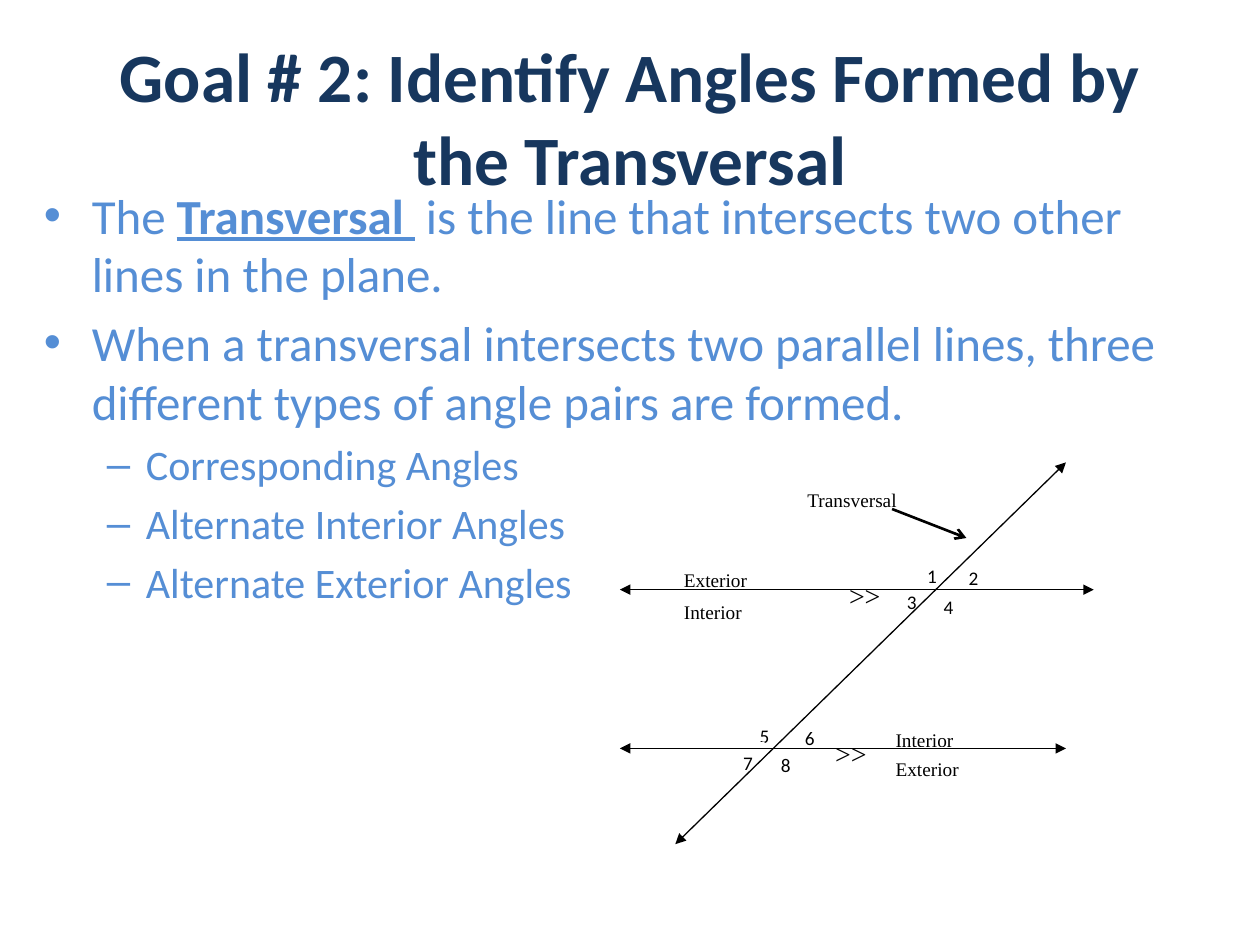
from dataclasses import dataclass
from lxml.etree import SubElement
from pptx import Presentation
from pptx.dml.color import RGBColor
from pptx.enum.shapes import MSO_CONNECTOR as Connector, MSO_SHAPE as Shape
from pptx.enum.text import MSO_ANCHOR as Anchor, PP_ALIGN as Align
from pptx.oxml.ns import qn
from pptx.util import Inches, Pt


@dataclass(frozen=True)
class Theme:
    title: RGBColor = RGBColor(0x17, 0x37, 0x5E)
    body: RGBColor = RGBColor(0x55, 0x8E, 0xD5)
    ink: RGBColor = RGBColor(0, 0, 0)
    paper: RGBColor = RGBColor(255, 255, 255)
    sans: str = "Calibri"
    serif: str = "Times New Roman"
    title_size: float = 39.6
    bullet_size: float = 28
    dash_size: float = 24
    mark_size: float = 16
    label_size: float = 11


THEME = Theme()


def style_font(font, name, size, color):
    font.name = name
    font.size = Pt(size)
    font.color.rgb = color


def add_text_frame(slide, box):
    text_frame = slide.shapes.add_textbox(*map(Inches, box)).text_frame
    text_frame.word_wrap = True
    return text_frame


def add_title(slide, box, text):
    text_frame = add_text_frame(slide, box)
    text_frame.vertical_anchor = Anchor.MIDDLE
    text_frame.text = text
    paragraph = text_frame.paragraphs[0]
    paragraph.alignment = Align.CENTER
    font = paragraph.runs[0].font
    style_font(font, THEME.sans, THEME.title_size, THEME.title)
    font.bold = True


def set_bullet(paragraph, character, margin, indent):
    properties = paragraph._p.get_or_add_pPr()
    properties.set("marL", str(Inches(margin)))
    properties.set("indent", str(Inches(indent)))
    SubElement(properties, qn("a:buFont"), typeface="Arial")
    SubElement(properties, qn("a:buChar"), char=character)


def add_bullets(slide, box, items):
    text_frame = add_text_frame(slide, box)
    levels = [("•", 0.38, -0.38, THEME.bullet_size), ("–", 0.81, -0.31, THEME.dash_size)]
    for index, (level, parts) in enumerate(items):
        paragraph = text_frame.add_paragraph() if index else text_frame.paragraphs[0]
        character, margin, indent, size = levels[level]
        paragraph.level = level
        paragraph.space_before = Pt(size * 0.2)
        set_bullet(paragraph, character, margin, indent)
        for text, is_term in parts:
            run = paragraph.add_run()
            run.text = text
            style_font(run.font, THEME.sans, size, THEME.body)
            run.font.bold = run.font.underline = is_term


def add_label(slide, box, text, font_name, size):
    shape = slide.shapes.add_shape(Shape.RECTANGLE, *map(Inches, box))
    shape.shadow.inherit = False
    shape.fill.solid()
    shape.fill.fore_color.rgb = THEME.paper
    shape.line.fill.background()
    text_frame = shape.text_frame
    text_frame.word_wrap = True
    text_frame.vertical_anchor = Anchor.TOP
    text_frame.text = text
    paragraph = text_frame.paragraphs[0]
    paragraph.alignment = Align.LEFT
    paragraph.line_spacing = 1.15
    paragraph.space_after = Pt(10)
    style_font(paragraph.runs[0].font, font_name, size, THEME.ink)


def add_arrow(slide, points, width, head, tail):
    connector = slide.shapes.add_connector(Connector.STRAIGHT, *map(Inches, points))
    connector.line.color.rgb = THEME.ink
    connector.line.width = Pt(width)
    line = connector.line._get_or_add_ln()
    for tag, arrow in (("a:headEnd", head), ("a:tailEnd", tail)):
        SubElement(line, qn(tag), type=arrow)
    SubElement(connector._element.spPr, qn("a:effectLst"))


def add_angle_diagram(slide, box):
    left, top, width, height = box
    upper, lower = top + 1.01, top + 2.27
    transversal_right = left + 3.54

    def add_group(entries, size, font_name, font_size):
        for text, x, y in entries:
            add_label(slide, (left + x, top + y, *size), text, font_name, font_size)

    words = [
        ("Exterior", 0.41, 0.76), ("Interior", 0.41, 1.02),
        ("Interior", 2.09, 2.03), ("Exterior", 2.09, 2.26),
    ]
    parallel_marks = [(">>\u00a0".strip(), 1.61, 2.09), (">>", 1.72, 0.83)]
    angles = [
        ("1", 2.34, 0.73), ("2", 2.67, 0.75), ("4", 2.47, 0.98), ("6", 1.37, 2.02),
        ("8", 1.18, 2.23), ("5", 1.01, 2), ("7", 0.88, 2.22), ("3", 2.18, 0.94),
    ]
    word_size = (1.36, 0.32)
    add_group([("Transversal", 1.39, 0.13)], word_size, THEME.serif, THEME.label_size)
    add_arrow(slide, (left + 2.16, top + 0.37, left + 2.75, top + 0.6), 1.5, "none", "arrow")
    add_group(parallel_marks, (0.54, 0.32), THEME.serif, THEME.mark_size)
    add_group(angles, (0.27, 0.27), THEME.sans, THEME.label_size)
    add_group(words, word_size, THEME.serif, THEME.label_size)

    for points in (
        (left + 0.44, top + height, transversal_right, top),
        (left, upper, left + width, upper),
        (left, lower, transversal_right, lower),
    ):
        add_arrow(slide, points, 0.75, "triangle", "triangle")


def main():
    presentation = Presentation()
    presentation.slide_width, presentation.slide_height = Inches(10), Inches(7.5)
    slide = presentation.slides.add_slide(presentation.slide_layouts[6])
    add_title(slide, (0.5, 0.3, 9, 1.25), "Goal # 2: Identify Angles Formed by the Transversal")
    pairs = ["Corresponding Angles", "Alternate Interior Angles", "Alternate Exterior Angles"]
    add_bullets(slide, (0.25, 1.42, 9.25, 5.28), [
        (0, [
            ("The ", False),
            ("Transversal ", True),
            (" is the line that intersects two other lines in the plane.", False),
        ]),
        (0, [(
            "When a transversal intersects two parallel lines, "
            "three different types of angle pairs are formed.", False,
        )]),
        *((1, [(pair, False)]) for pair in pairs),
    ])
    add_angle_diagram(slide, (4.92, 3.67, 3.76, 3.03))
    presentation.save("out.pptx")


if __name__ == "__main__":
    main()
